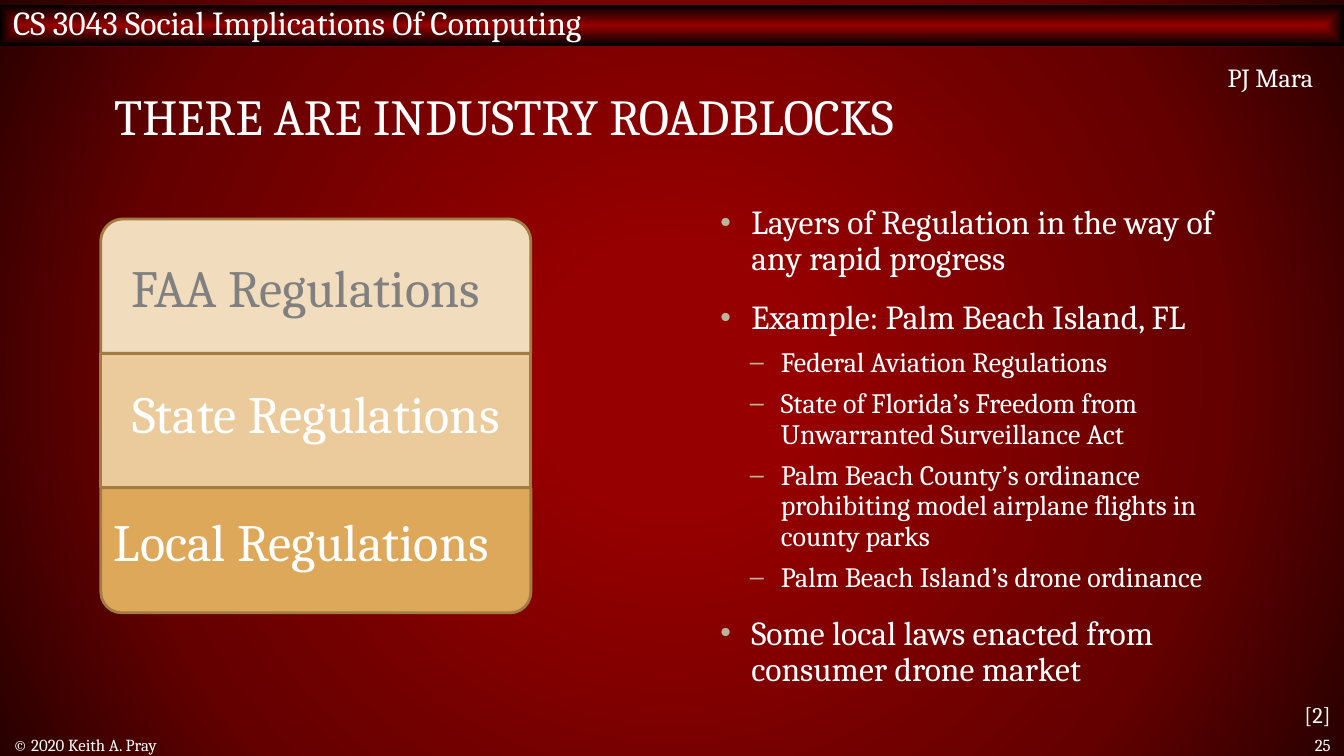
from lxml import etree
from pptx import Presentation
from pptx.dml.color import RGBColor
from pptx.enum import shapes, text
from pptx.oxml.ns import qn
from pptx.util import Inches, Pt

COURSE = "CS 3043 Social Implications Of Computing"
TITLE = "THERE ARE INDUSTRY ROADBLOCKS"
POINTS = [
    (0, "Layers of Regulation in the way of any rapid progress"),
    (0, "Example: Palm Beach Island, FL"),
    (1, "Federal Aviation Regulations"),
    (1, "State of Florida’s Freedom from Unwarranted Surveillance Act"),
    (1, "Palm Beach County’s ordinance prohibiting model airplane flights in county parks"),
    (1, "Palm Beach Island’s drone ordinance"),
    (0, "Some local laws enacted from consumer drone market"),
]

ROUNDED, SQUARE = shapes.MSO_SHAPE.ROUND_2_SAME_RECTANGLE, shapes.MSO_SHAPE.RECTANGLE
LEFT, CENTER, RIGHT = text.PP_ALIGN.LEFT, text.PP_ALIGN.CENTER, text.PP_ALIGN.RIGHT
MIDDLE, TOP = text.MSO_ANCHOR.MIDDLE, text.MSO_ANCHOR.TOP


class Theme:
    font = "Cambria"
    white, grey = "FFFFFF", "808080"
    bullet, outline = "BCB49E", "A37C42"
    background = [(17, "960000"), (71, "650000"), (100, "290000")]
    band = [(0, "960000"), (100, "000000")]
    title, course, layer, author, reference, footer = 27, 18, 28, 14, 12, 9
    # size, space before, bullet character for each list level
    levels = [(18, 12, "•"), (15, 6, "–")]


# label, preset, rotation, height, fill, text colour, label left, label top, alignment
LAYERS = [
    ("FAA Regulations", ROUNDED, 0, 1, "F1DCBD", Theme.grey, 0.88, 1.9, LEFT),
    ("State Regulations", SQUARE, 0, 1, "EBCB9B", Theme.white, 0.75, 2.84, CENTER),
    ("Local Regulations", ROUNDED, 180, 0.93, "DDA859", Theme.white, 0.75, 3.79, LEFT),
]
STACK_LEFT, STACK_TOP, STACK_WIDTH = 0.75, 1.63, 3.2

# text, box, size, alignment, anchor
NOTES = [
    ("© 2020 Keith A. Pray", (0, 5.46, 6.08, 0.16), Theme.footer, LEFT, MIDDLE),
    ("25", (9.32, 5.46, 0.68, 0.16), Theme.footer, RIGHT, MIDDLE),
    ("PJ Mara", (7.49, 0.41, 2.38, 0.34), Theme.author, RIGHT, TOP),
    ("[2]", (0, 5.17, 10, 0.3), Theme.reference, RIGHT, TOP),
]


def inches(box):
    return [Inches(length) for length in box]


def place(shape, box):
    shape.left, shape.top, shape.width, shape.height = inches(box)


def center_gradient(fill, owner, stops, path):
    """Fill with a gradient that spreads from the middle outwards."""
    fill.gradient()
    grad = owner.find(".//" + qn("a:gradFill"))
    for child in list(grad):
        grad.remove(child)
    stop_list = etree.SubElement(grad, qn("a:gsLst"))
    for position, color in stops:
        stop = etree.SubElement(stop_list, qn("a:gs"), pos=str(position * 1000))
        etree.SubElement(stop, qn("a:srgbClr"), val=color)
    spread = etree.SubElement(grad, qn("a:path"), path=path)
    etree.SubElement(spread, qn("a:fillToRect"), l="50000", t="50000", r="50000", b="50000")


def format_paragraph(paragraph, size, color=Theme.white, align=LEFT, spacing=1.0):
    paragraph.alignment = align
    paragraph.line_spacing = spacing
    for run in paragraph.runs:
        run.font.name = Theme.font
        run.font.size = Pt(size)
        run.font.color.rgb = RGBColor.from_string(color)


def write(shape, words, size, color=Theme.white, align=LEFT, anchor=TOP, spacing=1.0):
    frame = shape.text_frame
    frame.text = words
    frame.word_wrap = True
    frame.auto_size = text.MSO_AUTO_SIZE.NONE
    frame.vertical_anchor = anchor
    format_paragraph(frame.paragraphs[0], size, color, align, spacing)


def add_bullet(paragraph, level, character):
    props = paragraph._p.get_or_add_pPr()
    props.set("marL", str(Inches((0.23, 0.45)[level])))
    props.set("indent", str(Inches(-0.23)))
    color = etree.SubElement(props, qn("a:buClr"))
    etree.SubElement(color, qn("a:srgbClr"), val=Theme.bullet)
    etree.SubElement(props, qn("a:buSzPct"), val="90000")
    etree.SubElement(props, qn("a:buFont"), typeface="Arial")
    etree.SubElement(props, qn("a:buChar"), char=character)


def add_course_band(slide):
    band = slide.shapes.add_shape(SQUARE, *inches((0, 0.04, 10, 0.3)))
    band.shadow.inherit = False
    band.line.fill.background()
    center_gradient(band.fill, band.element, Theme.band, "rect")
    write(band, COURSE, Theme.course, anchor=MIDDLE)
    band.text_frame.margin_top = 0
    band.text_frame.margin_bottom = Inches(0.05)


def fill_points(body):
    place(body, (5.26, 1.48, 4.08, 3.75))
    frame = body.text_frame
    frame.auto_size = text.MSO_AUTO_SIZE.NONE
    frame.vertical_anchor = TOP
    for number, (level, words) in enumerate(POINTS):
        point = frame.add_paragraph() if number else frame.paragraphs[0]
        point.text = words
        point.level = level
        size, gap, character = Theme.levels[level]
        add_bullet(point, level, character)
        point.space_before = Pt(gap if number else 0)
        format_paragraph(point, size, spacing=0.9)


def add_layers(slide):
    top = STACK_TOP
    for words, preset, turn, height, fill, color, label_left, label_top, align in LAYERS:
        layer = slide.shapes.add_shape(preset, *inches((STACK_LEFT, top, STACK_WIDTH, height)))
        layer.rotation = turn
        layer.shadow.inherit = False
        layer.fill.solid()
        layer.fill.fore_color.rgb = RGBColor.from_string(fill)
        layer.line.color.rgb = RGBColor.from_string(Theme.outline)
        layer.line.width = Pt(1.5)
        label = slide.shapes.add_textbox(*inches((label_left, label_top, STACK_WIDTH, 0.53)))
        write(label, words, Theme.layer, color, align, spacing=0.9)
        top += height


def main():
    deck = Presentation()
    deck.slide_width = Inches(10)
    deck.slide_height = deck.slide_width * 9 // 16
    slide = deck.slides.add_slide(deck.slide_layouts[1])
    center_gradient(slide.background.fill, slide.element, Theme.background, "circle")
    add_course_band(slide)
    title = slide.shapes.title
    place(title, (0.75, 0.4, 8.5, 1))
    write(title, TITLE, Theme.title, anchor=MIDDLE, spacing=0.8)
    fill_points(slide.placeholders[1])
    for words, box, size, align, anchor in NOTES:
        note = slide.shapes.add_textbox(*inches(box))
        write(note, words, size, align=align, anchor=anchor)
    add_layers(slide)
    deck.save("out.pptx")


if __name__ == "__main__":
    main()
